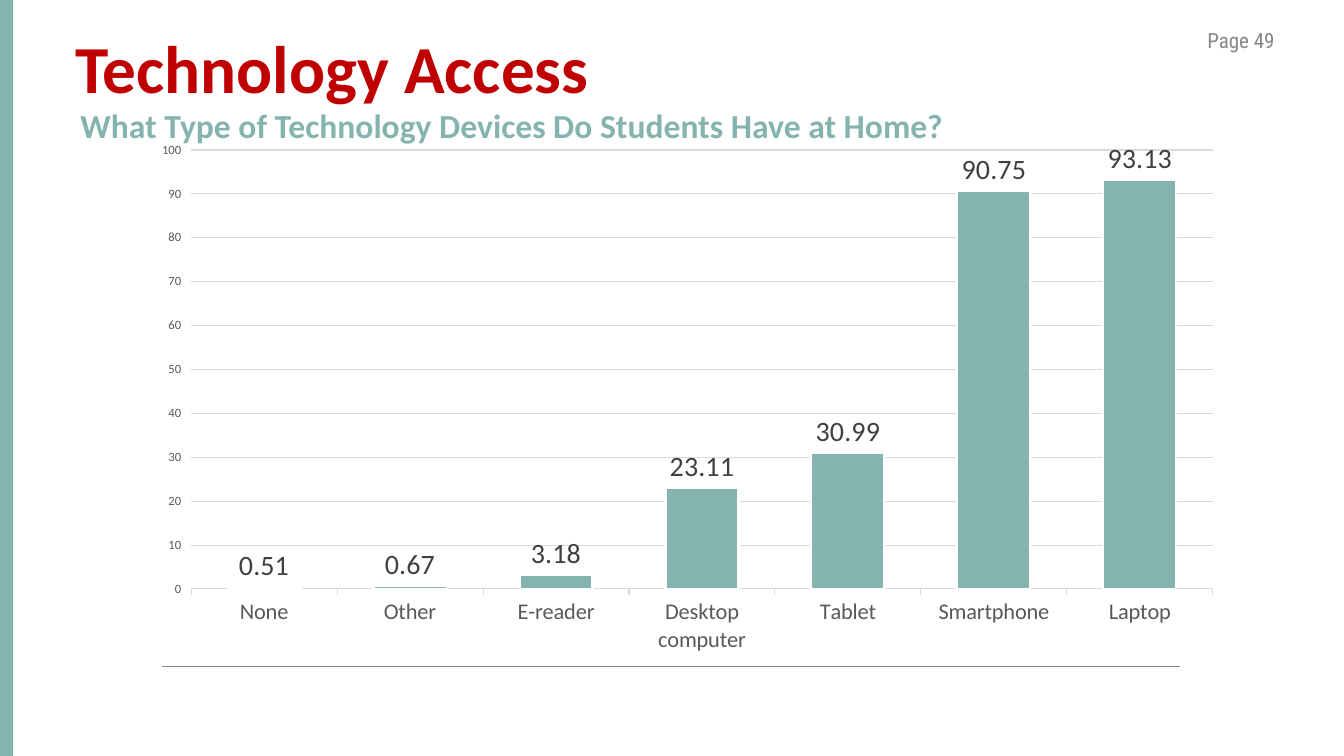
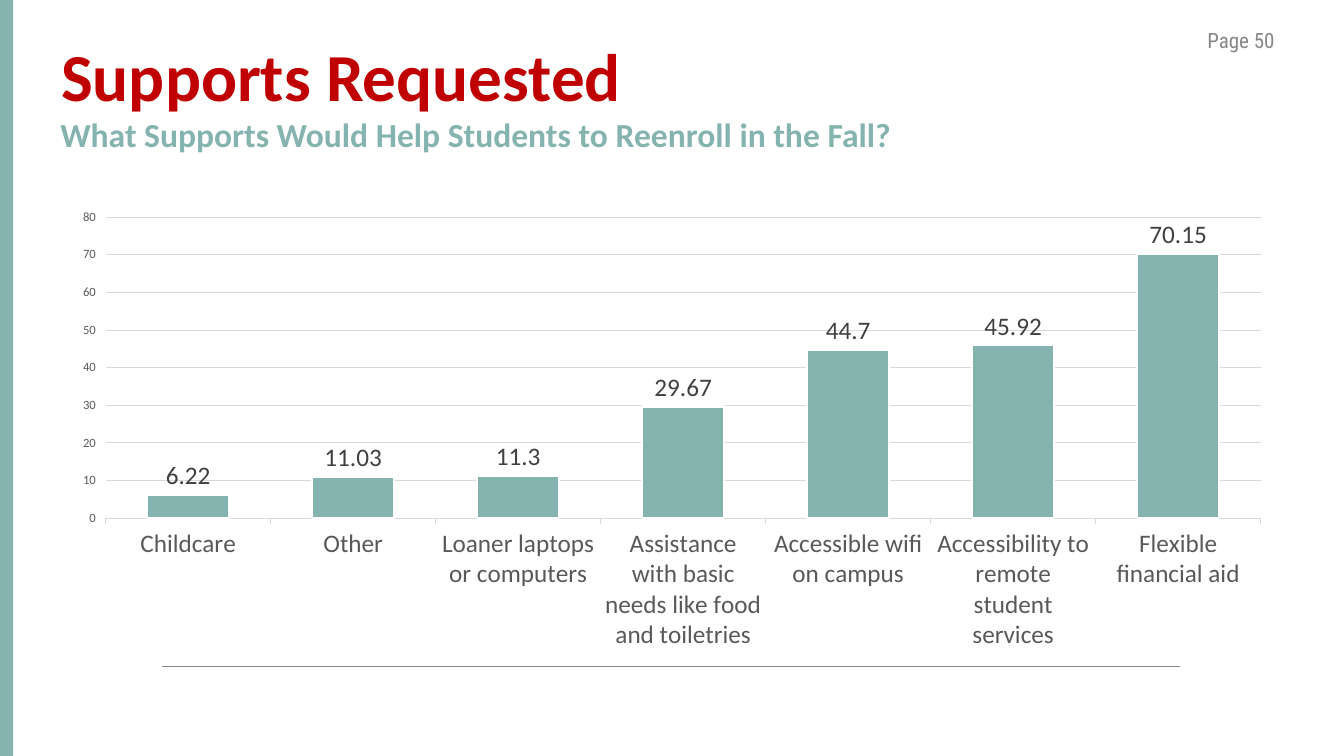
from pptx import Presentation
from pptx.chart.data import CategoryChartData
from pptx.dml.color import RGBColor
from pptx.enum.chart import XL_CHART_TYPE, XL_LABEL_POSITION, XL_TICK_MARK
from pptx.enum.shapes import MSO_CONNECTOR, MSO_SHAPE
from pptx.enum.text import MSO_ANCHOR, PP_ALIGN
from pptx.oxml.ns import qn
from pptx.util import Pt

COLUMNS = XL_CHART_TYPE.COLUMN_CLUSTERED
OUTSIDE_END = XL_LABEL_POSITION.OUTSIDE_END
TICK_OUT = XL_TICK_MARK.OUTSIDE
STRAIGHT = MSO_CONNECTOR.STRAIGHT
RECTANGLE = MSO_SHAPE.RECTANGLE
TOP, MIDDLE = MSO_ANCHOR.TOP, MSO_ANCHOR.MIDDLE
LEFT, CENTER = PP_ALIGN.LEFT, PP_ALIGN.CENTER

THEME = {
    "teal": RGBColor.from_string("85B4B0"),
    "red": RGBColor.from_string("C00000"),
    "gray": RGBColor.from_string("878787"),
    "axis_text": RGBColor.from_string("595959"),
    "label_text": RGBColor.from_string("404040"),
    "grid": RGBColor.from_string("D9D9D9"),
    "white": RGBColor.from_string("FFFFFF"),
    "font": "Calibri",
    "page_font": "Roboto Condensed",
    "title_size": 48,
    "subtitle_size": 24,
    "page_size": 15,
    "chart_size": 10,
    "value_axis_size": 9,
}

TITLE_FONT = {"name": THEME["font"], "size": Pt(THEME["title_size"]), "bold": True}
SUBTITLE_FONT = {"name": THEME["font"], "size": Pt(THEME["subtitle_size"]), "bold": True}
PAGE_FONT = {"name": THEME["page_font"], "size": Pt(THEME["page_size"])}

# Boxes are left, top, width, height in points.
PAGES = [
    {
        "number": 49,
        "title": "Technology Access",
        "title_box": (46.8, 12.96, 542.16, 62.64),
        "subtitle": "What Type of Technology Devices Do Students Have at Home?",
        "subtitle_box": (14.4, 74.88, 876.96, 36),
        "chart_box": (100.08, 94.32, 781.92, 380.16),
        "category_size": 16,
        "label_size": 20,
        "axis_top": 100,
        "values": {
            "None": 0.51,
            "Other": 0.67,
            "E-reader": 3.18,
            "Desktop computer": 23.11,
            "Tablet": 30.99,
            "Smartphone": 90.75,
            "Laptop": 93.13,
        },
    },
    {
        "number": 50,
        "title": "Supports Requested",
        "title_box": (36.72, 18.72, 542.16, 62.64),
        "subtitle": "What Supports Would Help Students to Reenroll in the Fall?",
        "subtitle_box": (0, 81.36, 933.84, 36),
        "chart_box": (41.76, 143.28, 876.24, 327.6),
        "category_size": 18,
        "label_size": 18,
        "axis_top": 80,
        "values": {
            "Childcare": 6.22,
            "Other": 11.03,
            "Loaner laptops or computers": 11.3,
            "Assistance with basic needs like food and toiletries": 29.67,
            "Accessible wifi on campus": 44.7,
            "Accessibility to remote student services": 45.92,
            "Flexible financial aid": 70.15,
        },
    },
]


def set_font(font, color, formats):
    for name, value in formats.items():
        setattr(font, name, value)
    font.color.rgb = color


def add_text(page, box, text, color, formats, align=LEFT, anchor=TOP):
    """Add a one-paragraph text box and return its frame."""
    frame = page.shapes.add_textbox(*map(Pt, box)).text_frame
    frame.word_wrap = True
    frame.vertical_anchor = anchor
    para = frame.paragraphs[0]
    para.alignment = align
    span = para.add_run()
    span.text = text
    set_font(span.font, color, formats)
    return frame


deck = Presentation()
deck.slide_width, deck.slide_height = Pt(960), Pt(540)
blank = deck.slide_layouts[6]

for content in PAGES:
    page = deck.slides.add_slide(blank)

    # Shared frame: page number, side band and bottom rule
    add_text(page, (843.12, 14.4, 90, 28.8), f"Page {content['number']} ",
             THEME["gray"], PAGE_FONT, CENTER, MIDDLE)
    band = page.shapes.add_shape(RECTANGLE, 0, 0, Pt(9.36), deck.slide_height)
    band.shadow.inherit = False
    band.fill.solid()
    band.fill.fore_color.rgb = THEME["teal"]
    band.line.fill.background()
    rule = page.shapes.add_connector(STRAIGHT, Pt(115.92), Pt(475.92), Pt(843.12), Pt(475.92))
    rule.line.color.rgb = THEME["gray"]
    rule.line.width = Pt(0.5)
    properties = rule.element.spPr
    properties.append(properties.makeelement(qn("a:effectLst"), {}))

    # Headings
    subtitle = add_text(page, content["subtitle_box"], content["subtitle"],
                        THEME["teal"], SUBTITLE_FONT)
    para = subtitle.paragraphs[0]
    para.level = 1
    para.line_spacing = 0.9
    indent = para._p.get_or_add_pPr()
    indent.set("marL", str(Pt(36)))
    indent.set("indent", "0")
    title = add_text(page, content["title_box"], content["title"], THEME["red"], TITLE_FONT)
    title.margin_top, title.margin_bottom = Pt(6), 0

    # Column chart
    data = CategoryChartData()
    data.categories = list(content["values"])
    data.add_series("Series 1", list(content["values"].values()))
    chart = page.shapes.add_chart(COLUMNS, *map(Pt, content["chart_box"]), data).chart
    chart.has_title = False
    chart.has_legend = False
    chart.font.name = THEME["font"]
    chart.font.size = Pt(THEME["chart_size"])

    axis_sizes = [
        (chart.category_axis, content["category_size"]),
        (chart.value_axis, THEME["value_axis_size"]),
    ]
    for axis, size in axis_sizes:
        axis.major_tick_mark = TICK_OUT
        set_font(axis.tick_labels.font, THEME["axis_text"],
                 {"name": THEME["font"], "size": Pt(size)})
    chart.value_axis.minimum_scale = 0
    chart.value_axis.maximum_scale = content["axis_top"]
    chart.value_axis.major_unit = 10
    chart.value_axis.format.line.fill.background()
    for line in (chart.category_axis.format.line, chart.value_axis.major_gridlines.format.line):
        line.color.rgb = THEME["grid"]
        line.width = Pt(0.75)

    plot = chart.plots[0]
    plot.gap_width = 100
    plot.vary_by_categories = False
    series = plot.series[0]
    series.format.fill.solid()
    series.format.fill.fore_color.rgb = THEME["teal"]
    series.format.line.color.rgb = THEME["white"]
    series.format.line.width = Pt(1.5)
    labels = series.data_labels
    labels.show_value = True
    labels.position = OUTSIDE_END
    set_font(labels.font, THEME["label_text"],
             {"name": THEME["font"], "size": Pt(content["label_size"])})

deck.save("out.pptx")
